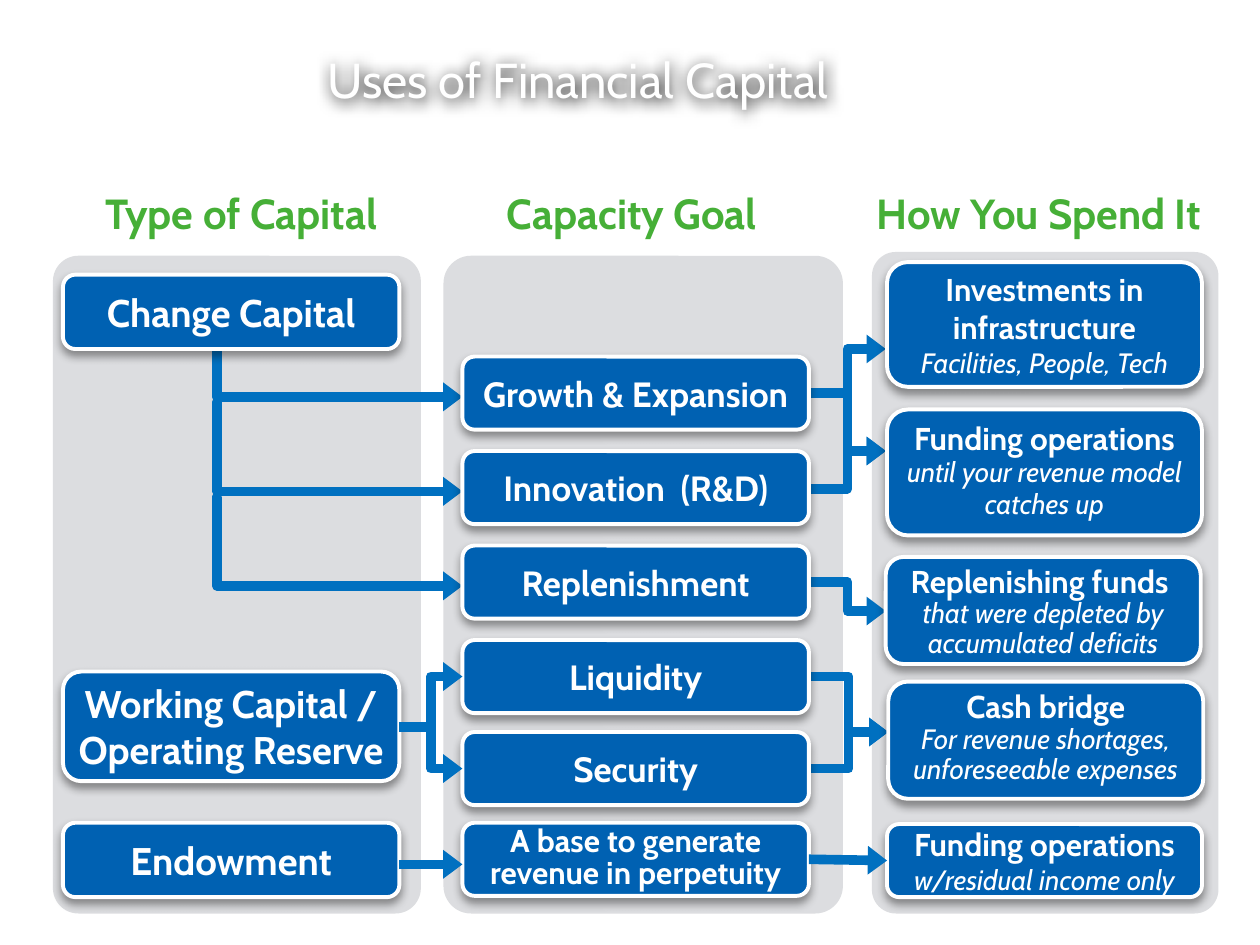
from dataclasses import dataclass

from lxml import etree
from pptx import Presentation
from pptx.dml.color import RGBColor
from pptx.enum.shapes import MSO_CONNECTOR, MSO_SHAPE
from pptx.enum.text import MSO_ANCHOR, PP_ALIGN
from pptx.oxml.ns import qn
from pptx.util import Inches, Pt

ROUND = MSO_SHAPE.ROUNDED_RECTANGLE
STRAIGHT, ELBOW = MSO_CONNECTOR.STRAIGHT, MSO_CONNECTOR.ELBOW
LEFT, CENTER = PP_ALIGN.LEFT, PP_ALIGN.CENTER
MIDDLE, BOTTOM = MSO_ANCHOR.MIDDLE, MSO_ANCHOR.BOTTOM
SIDE_LEFT, SIDE_RIGHT = 1, 3


@dataclass(frozen=True)
class Theme:
    font: str = "Cabin"
    white: RGBColor = RGBColor(0xFF, 0xFF, 0xFF)
    blue: RGBColor = RGBColor(0x00, 0x61, 0xB2)
    arrow: RGBColor = RGBColor(0x00, 0x70, 0xC0)
    panel: RGBColor = RGBColor(0xDC, 0xDD, 0xE0)
    green: RGBColor = RGBColor(0x46, 0xAF, 0x37)
    title: int = 28
    header: int = 24
    capital: int = 22
    goal: int = 20
    spend: int = 18
    detail: int = 16
    border: float = 2.25
    arrow_width: float = 5.5


T = Theme()

COLUMNS = [
    ((6.92, 2, 2.75, 5.25), "How You Spend It", 6.83),
    ((3.52, 2.03, 3.17, 5.22), "Capacity Goal", 3.6),
    ((0.42, 2.03, 2.92, 5.22), "Type of Capital", 0.5),
]
CAPITALS = [
    (2.18, 0.59, "Change Capital"),
    (5.33, 0.87, "Working Capital / Operating Reserve"),
    (6.53, 0.59, "Endowment"),
]
GOALS = [
    (2.83, "Growth & Expansion"),
    (3.58, "Innovation  (R&D)"),
    (4.33, "Replenishment"),
    (5.08, "Liquidity"),
    (5.81, "Security"),
]
SPENDING = [
    ((7.04, 2.08, 2.5, 0.99), [["Investments in infrastructure"],
                               ["", "Facilities, People, Tech"]], [None, None]),
    ((7.04, 3.25, 2.5, 1), [["Funding operations ",
                             "until your revenue model catches up"]], [18]),
    ((7.03, 4.42, 2.5, 0.85), [["Replenishing funds "],
                               ["", "that were depleted by accumulated deficits"]], [None, 17]),
    ((7.05, 5.41, 2.5, 0.93), [["Cash bridge"],
                               ["", "For revenue shortages, unforeseeable expenses"]], [17, 17]),
    ((7.04, 6.54, 2.5, 0.58), [["Funding operations"],
                               ["", "w/residual income only"]], [None, None]),
]
GOAL_TO_SPEND = [
    (3.88, 7.03, 3.58), (3.12, 7.03, 2.77), (3.12, 7.03, 3.58),
    (4.62, 7.03, 4.85), (5.37, 7.05, 5.81), (6.1, 7.05, 5.81),
]


def inches(values):
    return [Inches(v) for v in values]


def style_run(r, size, color, bold=False, italic=False):
    font = r.font
    font.name, font.size = T.font, Pt(size)
    font.bold, font.italic = bold, italic
    font.color.rgb = color


def add_shadow(sp, alpha, blur, dist):
    effects = etree.SubElement(sp._element.spPr, qn("a:effectLst"))
    shadow = etree.SubElement(effects, qn("a:outerShdw"), blurRad=str(Pt(blur)),
                              dist=str(Pt(dist)), dir="5400000", rotWithShape="0")
    color = etree.SubElement(shadow, qn("a:srgbClr"), val="000000")
    etree.SubElement(color, qn("a:alpha"), val=str(alpha * 1000))


def draw_title(slide, box, text):
    sp = slide.shapes.title
    sp.left, sp.top, sp.width, sp.height = inches(box)
    sp.fill.background()
    add_shadow(sp, 100, 8.5, 1)
    tf = sp.text_frame
    tf.text = text
    tf.vertical_anchor = MIDDLE
    p = tf.paragraphs[0]
    p.alignment = LEFT
    style_run(p.runs[0], T.title, T.white)


def draw_panel(slide, box):
    sp = slide.shapes.add_shape(ROUND, *inches(box))
    sp.adjustments[0] = 0.069
    sp.fill.solid()
    sp.fill.fore_color.rgb = T.panel
    sp.line.fill.background()
    sp.shadow.inherit = False


def draw_header(slide, box, text):
    tf = slide.shapes.add_textbox(*inches(box)).text_frame
    tf.word_wrap = True
    tf.vertical_anchor = BOTTOM
    tf.text = text
    p = tf.paragraphs[0]
    p.alignment = CENTER
    style_run(p.runs[0], T.header, T.green, bold=True)


def draw_card(slide, box, paragraphs, size, spacings=(None,), margin=0.1):
    sp = slide.shapes.add_shape(ROUND, *inches(box))
    sp.fill.solid()
    sp.fill.fore_color.rgb = T.blue
    sp.line.color.rgb = T.white
    sp.line.width = Pt(T.border)
    add_shadow(sp, 40, 5.2, 3)
    tf = sp.text_frame
    tf.word_wrap = True
    tf.vertical_anchor = MIDDLE
    tf.margin_left = tf.margin_right = Inches(margin)
    for i, (parts, spacing) in enumerate(zip(paragraphs, spacings)):
        p = tf.add_paragraph() if i else tf.paragraphs[0]
        p.alignment = CENTER
        if spacing:
            p.line_spacing = Pt(spacing)
        for is_detail, text in enumerate(parts):
            if text:
                r = p.add_run()
                r.text = text
                style_run(r, T.detail if is_detail else size, T.white,
                          bold=not is_detail, italic=bool(is_detail))
    return sp


def draw_arrow(slide, kind, start, end, bend=None):
    c = slide.shapes.add_connector(kind, *inches(start + end))
    c.line.color.rgb = T.arrow
    c.line.width = Pt(T.arrow_width)
    sp_pr = c._element.spPr
    etree.SubElement(sp_pr.find(qn("a:ln")), qn("a:tailEnd"),
                     type="triangle", w="med", len="sm")
    etree.SubElement(sp_pr, qn("a:effectLst"))
    if bend is not None:
        guides = sp_pr.find(qn("a:prstGeom")).get_or_add_avLst()
        etree.SubElement(guides, qn("a:gd"), name="adj1", fmla=f"val {int(bend * 100000)}")
    return c


def draw_back_arrows(slide):
    for y in (2.44, 3.19, 3.94):
        draw_arrow(slide, ELBOW, (1.75, y), (3.67, y + 0.71), bend=-0.015)
    for y, x_end, y_end in GOAL_TO_SPEND:
        draw_arrow(slide, ELBOW, (6.42, y), (x_end, y_end))


def draw_cards(slide):
    for top, height, text in CAPITALS:
        draw_card(slide, (0.5, top, 2.67, height), [[text]], T.capital, margin=0.08)
    for top, text in GOALS:
        draw_card(slide, (3.67, top, 2.75, 0.58), [[text]], T.goal)
    base = draw_card(slide, (3.67, 6.53, 2.75, 0.58),
                     [["A base to generate revenue in perpetuity"]], T.spend, [18])
    for box, paragraphs, spacings in SPENDING:
        margin = 0.05 if paragraphs[0] == ["Cash bridge"] else 0.1
        income = draw_card(slide, box, paragraphs, T.spend, spacings, margin)
    return base, income


def draw_front_arrows(slide, base, income):
    for y in (5.37, 6.1):
        draw_arrow(slide, ELBOW, (3.17, 5.77), (3.67, y))
    draw_arrow(slide, STRAIGHT, (3.17, 6.86), (3.67, 6.86))
    c = draw_arrow(slide, STRAIGHT, (6.42, 6.83), (7.03, 6.83))
    c.begin_connect(base, SIDE_RIGHT)
    c.end_connect(income, SIDE_LEFT)


def main():
    prs = Presentation()
    prs.slide_width, prs.slide_height = Inches(10), Inches(7.5)
    slide = prs.slides.add_slide(prs.slide_layouts[5])
    draw_title(slide, (2.5, 0.15, 7, 0.95), "Uses of Financial Capital")
    for panel, header, left in COLUMNS:
        draw_panel(slide, panel)
        draw_header(slide, (left, 1.24, 2.83, 0.7), header)
    draw_back_arrows(slide)
    base, income = draw_cards(slide)
    draw_front_arrows(slide, base, income)
    prs.save("out.pptx")


if __name__ == "__main__":
    main()
